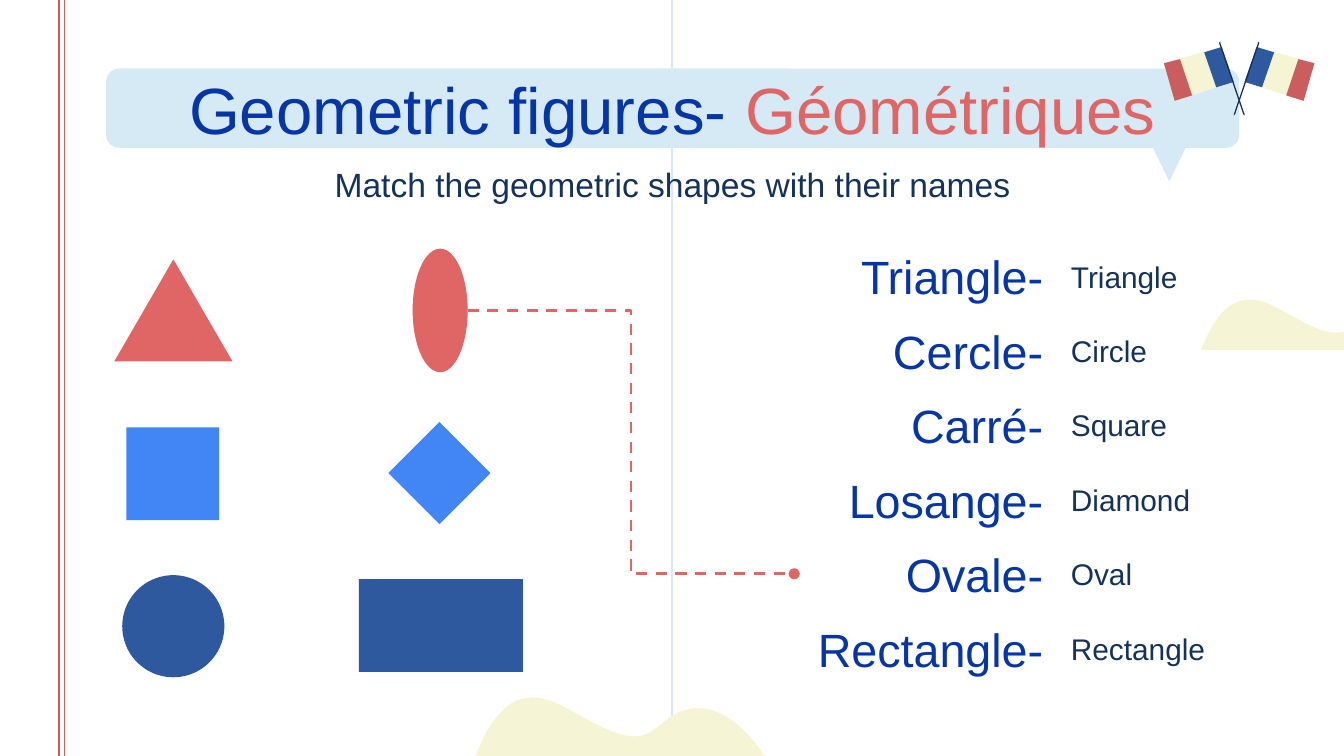
"""Build a slide that matches geometric figures with their French and English names."""
from dataclasses import dataclass
from typing import NamedTuple

from lxml.etree import SubElement
from pptx import Presentation
from pptx.dml.color import RGBColor
from pptx.enum.dml import MSO_LINE
from pptx.enum.shapes import MSO_CONNECTOR as Link, MSO_SHAPE as Kind
from pptx.enum.text import MSO_ANCHOR as Anchor, MSO_AUTO_SIZE as AutoSize, PP_ALIGN as Align
from pptx.oxml.ns import qn
from pptx.util import Inches, Pt


@dataclass(frozen=True)
class Theme:
    font: str = "Arial"
    royal: str = "0635A5"
    coral: str = "E06666"
    navy: str = "15325B"
    blue: str = "4285F4"
    denim: str = "2E599E"
    brick: str = "CA5E5E"
    sky: str = "D6EAF6"
    cream: str = "F5F4D5"
    title: int = 35
    name: int = 25
    subtitle: int = 18
    meaning: int = 16


class Box(NamedTuple):
    left: float
    top: float
    width: float
    height: float


class Figure(NamedTuple):
    kind: Kind
    box: Box
    color: str
    rotation: int = 0


class Word(NamedTuple):
    french: str
    english: str


class Patch(NamedTuple):
    points: list
    color: str


class Rule(NamedTuple):
    start: tuple
    end: tuple
    color: str
    width: float = 0.75
    kind: Link = Link.STRAIGHT


THEME = Theme()
WIDTH = 10
HEIGHT = WIDTH * 9 / 16

BANNER = [
    Figure(Kind.ROUNDED_RECTANGLE, Box(0.79, 0.51, 8.43, 0.59), THEME.sky),
    Figure(Kind.ISOSCELES_TRIANGLE, Box(8.54, 1.02, 0.32, 0.33), THEME.sky, 180),
]
FIGURES = [
    Figure(Kind.ISOSCELES_TRIANGLE, Box(0.85, 1.93, 0.88, 0.76), THEME.coral),
    Figure(Kind.RECTANGLE, Box(0.94, 3.18, 0.69, 0.69), THEME.blue),
    Figure(Kind.OVAL, Box(0.91, 4.28, 0.76, 0.76), THEME.denim),
    Figure(Kind.DIAMOND, Box(2.89, 3.14, 0.76, 0.76), THEME.blue),
    Figure(Kind.OVAL, Box(3.07, 1.85, 0.41, 0.92), THEME.coral),
    Figure(Kind.RECTANGLE, Box(2.67, 4.31, 1.22, 0.69), THEME.denim),
]
WORDS = [
    Word("Triangle-", "Triangle"), Word("Cercle-", "Circle"), Word("Carré-", "Square"),
    Word("Losange-", "Diamond"), Word("Ovale-", "Oval"), Word("Rectangle-", "Rectangle"),
]
FIRST_ROW, LAST_ROW = 1.84, 4.61
PAGE_RULES = [
    Rule((5, 0), (5, HEIGHT), THEME.sky),
    Rule((0.44, 0), (0.44, HEIGHT), THEME.brick),
    Rule((0.48, 0), (0.48, HEIGHT), THEME.brick),
]
ANSWER = Rule((3.48, 2.31), (5.91, 4.27), THEME.coral, 1.5, Link.ELBOW)
FLAG_AXIS = 9.22
FLAG = [
    Patch([(9.35, 0.35), (9.26, 0.61), (9.7, 0.75), (9.78, 0.47)], THEME.cream),
    Patch([(9.35, 0.35), (9.26, 0.61), (9.39, 0.65), (9.48, 0.39)], THEME.denim),
    Patch([(9.66, 0.44), (9.57, 0.71), (9.7, 0.75), (9.78, 0.47)], THEME.brick),
    Patch([(9.36, 0.31), (9.37, 0.32), (9.19, 0.85), (9.18, 0.86), (9.18, 0.85), (9.36, 0.32)],
          THEME.navy),
]
HILL_CURVES = [
    [(0, 0.44), (0, 0.44), (0.1, 0.11), (0.31, 0.02)],
    [(0.31, 0.02), (0.35, 0.01), (0.39, 0), (0.43, 0)],
    [(0.43, 0), (0.6, 0), (0.76, 0.15), (1.03, 0.26)],
    [(1.03, 0.26), (1.09, 0.28), (1.14, 0.29), (1.18, 0.29)],
    [(1.18, 0.29), (1.36, 0.29), (1.4, 0.1), (1.63, 0.08)],
    [(1.63, 0.08), (1.93, 0.06), (2.15, 0.44), (2.15, 0.44)],
]


def bezier(curve: list, t: float) -> tuple:
    """Return the point at t on a cubic curve."""
    weights = ((1 - t) ** 3, 3 * t * (1 - t) ** 2, 3 * t * t * (1 - t), t ** 3)
    return tuple(sum(w * p[axis] for w, p in zip(weights, curve)) for axis in (0, 1))


def paint(shape, color: str) -> None:
    """Give a shape a flat fill without line or shadow."""
    shape.shadow.inherit = False
    shape.fill.solid()
    shape.fill.fore_color.rgb = RGBColor.from_string(color)
    shape.line.fill.background()


def draw_figure(slide, figure: Figure) -> None:
    """Draw one preset shape."""
    shape = slide.shapes.add_shape(figure.kind, *map(Inches, figure.box))
    shape.rotation = figure.rotation
    paint(shape, figure.color)


def draw_patch(slide, patch: Patch) -> None:
    """Draw one closed outline."""
    first, *rest = [(Inches(x), Inches(y)) for x, y in patch.points]
    builder = slide.shapes.build_freeform(*first)
    builder.add_line_segments(rest, close=True)
    paint(builder.convert_to_shape(), patch.color)


def draw_hill(slide, left: float, top: float, scale: float) -> None:
    """Draw a two-humped hill."""
    outline = [bezier(curve, step / 12) for curve in HILL_CURVES for step in range(13)]
    draw_patch(slide, Patch([(left + x * scale, top + y * scale) for x, y in outline], THEME.cream))


def draw_rule(slide, rule: Rule):
    """Draw one line and return it."""
    line = slide.shapes.add_connector(rule.kind, *map(Inches, rule.start + rule.end))
    line.line.color.rgb = RGBColor.from_string(rule.color)
    line.line.width = Pt(rule.width)
    SubElement(line._element.spPr, qn("a:effectLst"))
    return line


def draw_answer(slide, rule: Rule) -> None:
    """Draw the dashed answer line with its round end."""
    line = draw_rule(slide, rule).line
    line.dash_style = MSO_LINE.DASH
    SubElement(line._get_or_add_ln(), qn("a:tailEnd"), type="oval")


def write(slide, box: Box, *texts: str, colors: tuple, size: int, align: Align = Align.LEFT,
          holder=None) -> None:
    """Write texts as runs of one paragraph, in a given holder or a new text box."""
    holder = holder or slide.shapes.add_textbox(0, 0, 0, 0)
    holder.left, holder.top, holder.width, holder.height = map(Inches, box)
    frame = holder.text_frame
    frame.word_wrap, frame.auto_size = True, AutoSize.NONE
    frame.vertical_anchor = Anchor.MIDDLE
    frame.margin_left = frame.margin_right = frame.margin_top = frame.margin_bottom = Inches(0.1)
    paragraph = frame.paragraphs[0]
    paragraph.alignment = align
    for text, color in zip(texts, colors):
        run = paragraph.add_run()
        run.text = text
        run.font.name, run.font.size = THEME.font, Pt(size)
        run.font.color.rgb = RGBColor.from_string(color)


def main() -> None:
    """Build and save the slide."""
    deck = Presentation()
    deck.slide_width, deck.slide_height = Inches(WIDTH), Inches(HEIGHT)
    slide = deck.slides.add_slide(deck.slide_layouts[5])
    for rule in PAGE_RULES:
        draw_rule(slide, rule)
    for figure in BANNER:
        draw_figure(slide, figure)
    draw_hill(slide, 8.94, 2.23, 0.85)
    draw_hill(slide, 3.54, 5.19, 1)

    title = slide.shapes.title
    slide.shapes._spTree.append(title._element)
    write(slide, Box(0.79, 0.49, 8.43, 0.63), "Geometric figures- ", "Géométriques",
          colors=(THEME.royal, THEME.coral), size=THEME.title, align=Align.CENTER, holder=title)
    for patch in FLAG:
        draw_patch(slide, patch)
    for patch in FLAG:
        mirrored = [(2 * FLAG_AXIS - x, y) for x, y in patch.points]
        draw_patch(slide, Patch(mirrored, patch.color))
    for figure in FIGURES:
        draw_figure(slide, figure)
    for row, word in enumerate(WORDS):
        top = FIRST_ROW + row * (LAST_ROW - FIRST_ROW) / (len(WORDS) - 1)
        write(slide, Box(5.91, top, 1.95, 0.43), word.french,
              colors=(THEME.royal,), size=THEME.name, align=Align.RIGHT)
        write(slide, Box(7.87, top, 1.28, 0.43), word.english,
              colors=(THEME.navy,), size=THEME.meaning)
    write(slide, Box(0.79, 1.11, 8.43, 0.52), "Match the geometric shapes with their names",
          colors=(THEME.navy,), size=THEME.subtitle, align=Align.CENTER)
    draw_answer(slide, ANSWER)
    deck.save("out.pptx")


if __name__ == "__main__":
    main()
